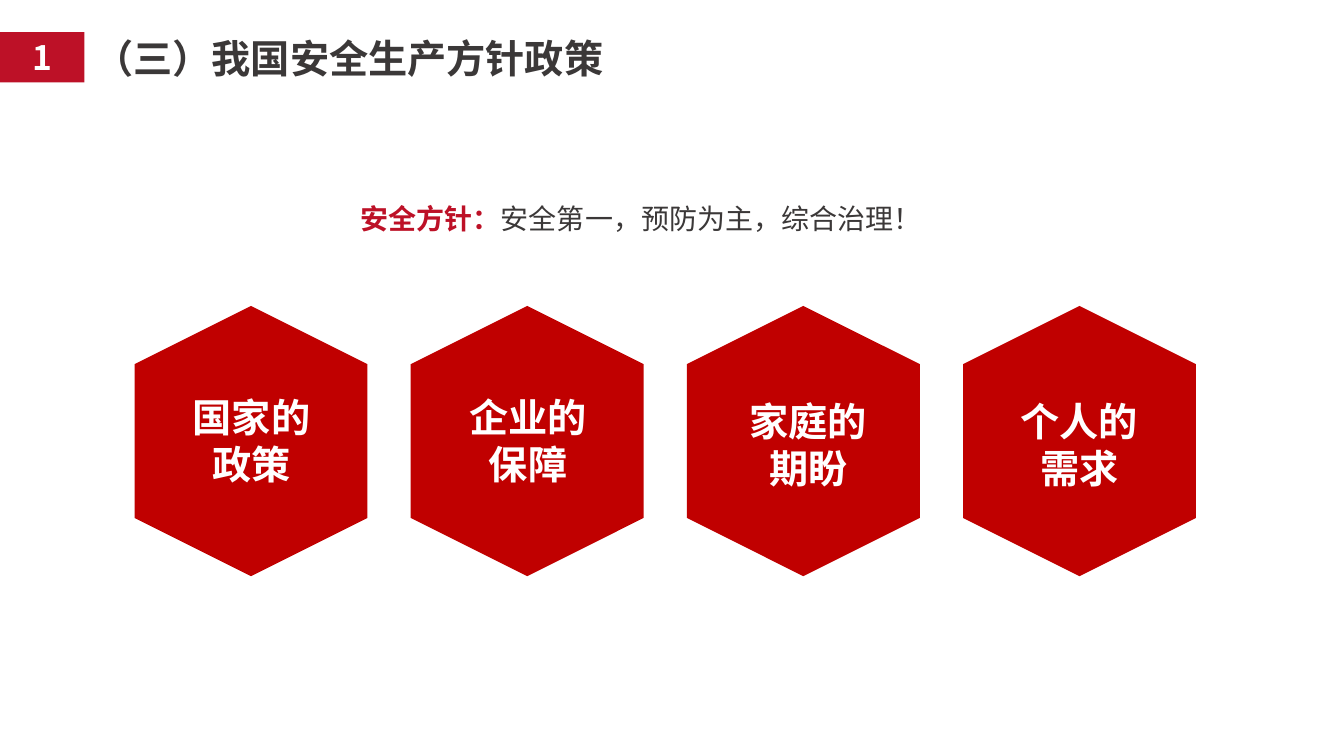
from dataclasses import dataclass

from lxml import etree
from pptx import Presentation
from pptx.dml.color import RGBColor
from pptx.enum import shapes, text
from pptx.oxml import ns
from pptx.util import Cm, Pt

FONT = "Noto Sans CJK SC"
CRIMSON = RGBColor(0xBD, 0x11, 0x27)
RED = RGBColor(0xC0, 0x00, 0x00)
CHARCOAL = RGBColor(0x3B, 0x38, 0x38)
WHITE = RGBColor(0xFF, 0xFF, 0xFF)

HEXAGON_LEFT, HEXAGON_TOP, HEXAGON_PITCH = 2.92, 8.18, 6.96
HEXAGON_WIDTH, HEXAGON_HEIGHT = 6.81, 5.87
LABEL_WIDTH, LABEL_HEIGHT = 3.89, 2.64


@dataclass(frozen=True)
class Wording:
    content: str
    size: float
    color: RGBColor
    bold: bool = True


@dataclass(frozen=True)
class Benefit:
    label: str
    center: float
    top: float


BENEFITS = (
    Benefit("国家的政策", 6.34, 9.78),
    Benefit("企业的保障", 13.31, 9.78),
    Benefit("家庭的期盼", 20.37, 9.88),
    Benefit("个人的需求", 27.2, 9.88),
)


def apply(target, values: dict) -> None:
    for name, value in values.items():
        setattr(target, name, value)


def place(shape, left: float, top: float, width: float, height: float) -> None:
    apply(shape, {"left": Cm(left), "top": Cm(top),
                  "width": Cm(width), "height": Cm(height)})


def write(shape, wordings: list[Wording], align, wrap: bool = True, spacing=None) -> None:
    frame = shape.text_frame
    apply(frame, {"word_wrap": wrap, "auto_size": text.MSO_AUTO_SIZE.NONE,
                  "vertical_anchor": text.MSO_ANCHOR.MIDDLE,
                  "margin_left": Cm(0.25), "margin_right": Cm(0.25),
                  "margin_top": Cm(0.13), "margin_bottom": Cm(0.13)})
    paragraph = frame.paragraphs[0]
    apply(paragraph, {"alignment": align, "line_spacing": spacing})
    for wording in wordings:
        run = paragraph.add_run()
        run.text = wording.content
        apply(run.font, {"name": FONT, "size": Pt(wording.size), "bold": wording.bold})
        run.font.color.rgb = wording.color
        east_asian = etree.SubElement(run.font._element, ns.qn("a:ea"))
        east_asian.set("typeface", FONT)


def add_solid(parent, kind, color: RGBColor, left: float, top: float,
              width: float, height: float):
    solid = parent.add_shape(kind, Cm(left), Cm(top), Cm(width), Cm(height))
    solid.shadow.inherit = False
    solid.fill.solid()
    solid.fill.fore_color.rgb = color
    solid.line.fill.background()
    return solid


def add_benefit(slide, index: int, benefit: Benefit) -> None:
    card = slide.shapes.add_group_shape().shapes
    hexagon = add_solid(card, shapes.MSO_SHAPE.HEXAGON, RED,
                        HEXAGON_LEFT + index * HEXAGON_PITCH, HEXAGON_TOP,
                        HEXAGON_WIDTH, HEXAGON_HEIGHT)
    hexagon.rotation = 90
    label = add_solid(card, shapes.MSO_SHAPE.RECTANGLE, RED,
                      benefit.center - LABEL_WIDTH / 2, benefit.top,
                      LABEL_WIDTH, LABEL_HEIGHT)
    write(label, [Wording(benefit.label, 28, WHITE)], text.PP_ALIGN.CENTER,
          spacing=Pt(33.5))


def main() -> None:
    deck = Presentation()
    apply(deck, {"slide_width": Cm(33.87), "slide_height": Cm(19.05)})
    slide = deck.slides.add_slide(deck.slide_layouts[5])

    heading = slide.shapes.title
    place(heading, 2.13, 0.74, 14.3, 1.45)
    write(heading, [Wording("（三）我国安全生产方针政策", 28, CHARCOAL)],
          text.PP_ALIGN.LEFT)

    section_number = add_solid(slide.shapes, shapes.MSO_SHAPE.RECTANGLE, CRIMSON,
                               0, 0.81, 2.13, 1.27)
    write(section_number, [Wording("1", 24, WHITE)], text.PP_ALIGN.CENTER)

    policy = slide.shapes.add_textbox(Cm(8.84), Cm(4.95), Cm(14.76), Cm(1.12))
    write(policy, [Wording("安全方针：", 20, CRIMSON),
                   Wording("安全第一，预防为主，综合治理！", 20, CHARCOAL, False)],
          text.PP_ALIGN.LEFT, wrap=False)

    for index, benefit in enumerate(BENEFITS):
        add_benefit(slide, index, benefit)

    deck.save("out.pptx")


if __name__ == "__main__":
    main()
